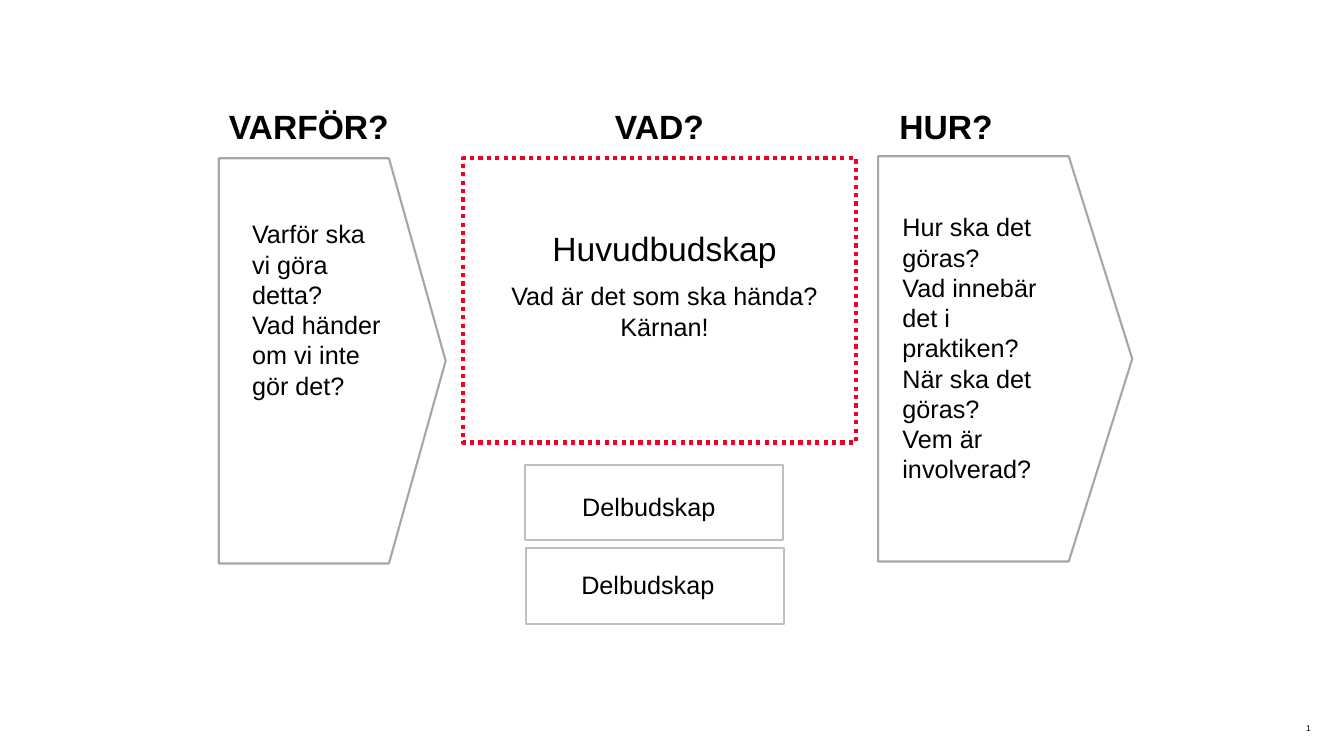
"""Builds the Varför–Vad–Hur message planning slide."""
from dataclasses import dataclass

from lxml.etree import SubElement
from pptx import Presentation
from pptx.dml.color import RGBColor
from pptx.enum.dml import MSO_LINE
from pptx.enum.shapes import MSO_SHAPE
from pptx.enum.text import MSO_AUTO_SIZE, PP_ALIGN
from pptx.oxml.ns import qn
from pptx.util import Emu, Pt

EMU_PER_PX = 9144


@dataclass(frozen=True)
class Theme:
    font: str = "Arial"
    text: str = "000000"
    white: str = "FFFFFF"
    accent: str = "ED0026"
    arrow_line: str = "A6A6A6"
    box_line: str = "BFBFBF"
    heading: int = 24
    body: int = 18
    small: int = 6


THEME = Theme()


def px(length):
    return Emu(length * EMU_PER_PX)


def add_outline(slide, kind, box, color, width=1.5, fill=None, dash=None):
    shape = slide.shapes.add_shape(kind, *map(px, box))
    shape.shadow.inherit = False
    if fill:
        shape.fill.solid()
        shape.fill.fore_color.rgb = RGBColor.from_string(fill)
    else:
        shape.fill.background()
    shape.line.color.rgb = RGBColor.from_string(color)
    shape.line.width = Pt(width)
    if dash:
        shape.line.dash_style = dash
    return shape


def add_arrow(slide, box):
    arrow = add_outline(slide, MSO_SHAPE.PENTAGON, box, THEME.arrow_line, fill=THEME.white)
    arrow.adjustments[0] = 0.25


def add_text(slide, box, lines, sizes, align=PP_ALIGN.LEFT, bold=False, gap=0, spacing=None):
    text_frame = slide.shapes.add_textbox(*map(px, box)).text_frame
    text_frame.word_wrap = True
    text_frame.auto_size = MSO_AUTO_SIZE.SHAPE_TO_FIT_TEXT
    text_frame.margin_left = text_frame.margin_right = 0
    text_frame.margin_top = text_frame.margin_bottom = 0
    text_frame.text = "\n".join(lines)
    for index, (paragraph, size) in enumerate(zip(text_frame.paragraphs, sizes)):
        paragraph.alignment = align
        if spacing:
            paragraph.line_spacing = spacing
        if index and gap:
            paragraph.space_before = Pt(gap)
        for run in paragraph.runs:
            run.font.name = THEME.font
            run.font.size = Pt(size)
            run.font.bold = bold
            run.font.color.rgb = RGBColor.from_string(THEME.text)
    return text_frame


def add_headings(slide, box, headings, stops):
    text_frame = add_text(slide, box, ["\t".join(headings)], [THEME.heading], bold=True)
    tabs = SubElement(text_frame.paragraphs[0]._p.get_or_add_pPr(), qn("a:tabLst"))
    for stop in stops:
        SubElement(tabs, qn("a:tab"), pos=str(px(stop)), algn="l")


def add_part_message(slide, box, text_box):
    add_outline(slide, MSO_SHAPE.RECTANGLE, box, THEME.box_line)
    add_text(slide, text_box, ["Delbudskap"], [THEME.body], PP_ALIGN.CENTER, spacing=0.8)


def add_slide_number(slide, box):
    text_frame = add_text(slide, box, ["1"], [THEME.small], PP_ALIGN.RIGHT)
    field = text_frame.paragraphs[0].runs[0]._r
    field.tag = qn("a:fld")
    field.set("id", "{B6F15528-21DE-4FAA-801E-634DDDAF4B2B}")
    field.set("type", "slidenum")


def main():
    presentation = Presentation()
    presentation.slide_width, presentation.slide_height = px(1333), px(750)
    slide = presentation.slides.add_slide(presentation.slide_layouts[6])

    add_headings(slide, (227, 105, 863, 40), ["VARFÖR?", "VAD?", "HUR?"], [383, 665])

    add_arrow(slide, (217, 157, 225, 402))
    why = ["Varför ska vi göra detta?", "Vad händer om vi inte gör det?"]
    add_text(slide, (250, 217, 133, 182), why, [THEME.body] * 2)

    add_outline(slide, MSO_SHAPE.RECTANGLE, (459, 157, 390, 282), THEME.accent,
                width=3, dash=MSO_LINE.ROUND_DOT)
    what = ["Huvudbudskap", "Vad är det som ska hända? Kärnan!"]
    add_text(slide, (488, 226, 342, 167), what, [THEME.heading, THEME.body],
             PP_ALIGN.CENTER, gap=9)

    add_part_message(slide, (521, 461, 256, 75), (481, 493, 325, 24))
    add_part_message(slide, (522, 544, 256, 75), (480, 571, 325, 24))

    add_arrow(slide, (871, 155, 252, 402))
    how = ["Hur ska det göras?", "Vad innebär det i praktiken? När ska det göras?",
           "Vem är involverad?"]
    add_text(slide, (895, 210, 142, 273), how, [THEME.body] * 3)

    add_slide_number(slide, (1233, 717, 67, 10))
    presentation.save("out.pptx")


if __name__ == "__main__":
    main()
